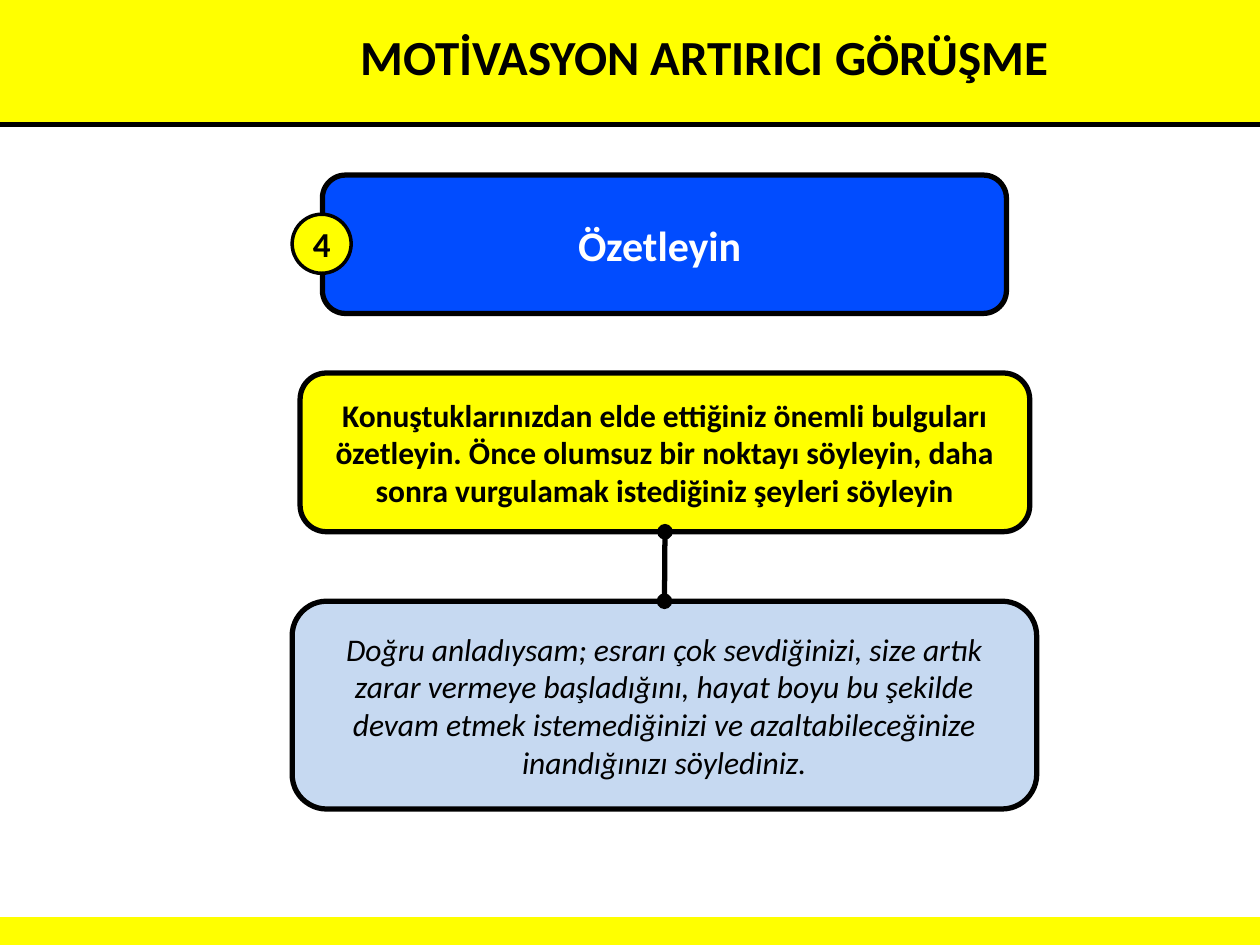
from dataclasses import dataclass

from lxml.etree import SubElement
from pptx import Presentation
from pptx.dml.color import RGBColor
from pptx.enum.shapes import MSO_CONNECTOR as Connector, MSO_SHAPE as Shape
from pptx.enum.text import MSO_ANCHOR as Anchor, PP_ALIGN as Align
from pptx.oxml.ns import qn
from pptx.shapes.autoshape import Shape as AutoShape
from pptx.shapes.connector import Connector as Line
from pptx.shapes.shapetree import SlideShapes
from pptx.util import Cm, Pt

WIDTH, HEIGHT = 25.4, 19.05
HEADER_HEIGHT, FOOTER_HEIGHT = 2.51, 0.53
YELLOW, BLACK, WHITE = "FFFF00", "000000", "FFFFFF"
BLUE, PALE_BLUE = "014CFF", "C6D9F1"


@dataclass
class Panel:
    """A filled, outlined shape with optional centred text; lengths in cm."""
    left: float
    top: float
    width: float
    height: float
    fill: str
    text: str = ""
    size: int = 18
    color: str = BLACK
    bold: bool = True
    italic: bool = False
    kind: Shape = Shape.ROUNDED_RECTANGLE
    outline: str = BLACK
    outline_width: float = 3
    inset: float = 0.25


def rgb(value: str) -> RGBColor:
    return RGBColor.from_string(value)


def write(shape: AutoShape, text: str, size: int, color: str,
          bold: bool = True, italic: bool = False) -> None:
    frame = shape.text_frame
    frame.word_wrap = True
    frame.vertical_anchor = Anchor.MIDDLE
    paragraph = frame.paragraphs[0]
    paragraph.text = text
    paragraph.alignment = Align.CENTER
    font = paragraph.font
    font.name, font.size = "Calibri", Pt(size)
    font.bold, font.italic = bold, italic
    font.color.rgb = rgb(color)


def draw_panel(shapes: SlideShapes, panel: Panel) -> AutoShape:
    shape = shapes.add_shape(panel.kind, Cm(panel.left), Cm(panel.top),
                             Cm(panel.width), Cm(panel.height))
    shape.shadow.inherit = False
    shape.fill.solid()
    shape.fill.fore_color.rgb = rgb(panel.fill)
    shape.line.color.rgb = rgb(panel.outline)
    shape.line.width = Pt(panel.outline_width)
    if panel.text:
        shape.text_frame.margin_left = shape.text_frame.margin_right = Cm(panel.inset)
        write(shape, panel.text, panel.size, panel.color, panel.bold, panel.italic)
    return shape


def draw_band(shapes: SlideShapes, top: float, height: float) -> None:
    draw_panel(shapes, Panel(0, top, WIDTH, height, YELLOW, kind=Shape.RECTANGLE,
                             outline=YELLOW, outline_width=2))


def draw_line(shapes: SlideShapes, x1: float, y1: float, x2: float, y2: float) -> Line:
    line = shapes.add_connector(Connector.STRAIGHT, Cm(x1), Cm(y1), Cm(x2), Cm(y2))
    line.line.color.rgb = rgb(BLACK)
    line.line.width = Pt(3)
    SubElement(line._element.spPr, qn("a:effectLst"))
    return line


def join_with_dots(shapes: SlideShapes, upper: AutoShape, lower: AutoShape) -> None:
    """Link the bottom of one panel to the top of another with oval ends."""
    link = draw_line(shapes, 0, 0, 1, 1)
    link.begin_connect(upper, 2)
    link.end_connect(lower, 0)
    outline = link.line._get_or_add_ln()
    for end in ("a:headEnd", "a:tailEnd"):
        SubElement(outline, qn(end), type="oval")


def main() -> None:
    presentation = Presentation()
    presentation.slide_width, presentation.slide_height = Cm(WIDTH), Cm(HEIGHT)
    slide = presentation.slides.add_slide(presentation.slide_layouts[6])
    shapes = slide.shapes

    draw_band(shapes, 0, HEADER_HEIGHT)
    draw_band(shapes, HEIGHT - FOOTER_HEIGHT, FOOTER_HEIGHT)
    draw_line(shapes, 0, HEADER_HEIGHT, WIDTH, HEADER_HEIGHT)

    title = shapes.add_textbox(Cm(1.5), Cm(-0.46), Cm(WIDTH), Cm(3.18))
    write(title, "MOTİVASYON ARTIRICI GÖRÜŞME", 28, BLACK)

    example = draw_panel(shapes, Panel(
        5.89, 12.12, 15.01, 4.19, PALE_BLUE,
        "Doğru anladıysam; esrarı çok sevdiğinizi, size artık zarar vermeye "
        "başladığını, hayat boyu bu şekilde devam etmek istemediğinizi ve "
        "azaltabileceğinize inandığınızı söylediniz.",
        bold=False, italic=True))
    advice = draw_panel(shapes, Panel(
        6.05, 7.52, 14.71, 3.2, YELLOW,
        "Konuştuklarınızdan elde ettiğiniz önemli bulguları özetleyin. Önce "
        "olumsuz bir noktayı söyleyin, daha sonra vurgulamak istediğiniz "
        "şeyleri söyleyin"))
    join_with_dots(shapes, advice, example)

    draw_panel(shapes, Panel(6.5, 3.53, 13.79, 2.79, BLUE, "Özetleyin ",
                             size=24, color=WHITE))
    draw_panel(shapes, Panel(5.89, 4.32, 1.19, 1.19, YELLOW, "4", size=20,
                             kind=Shape.OVAL, outline_width=2, inset=0))

    presentation.save("out.pptx")


if __name__ == "__main__":
    main()
